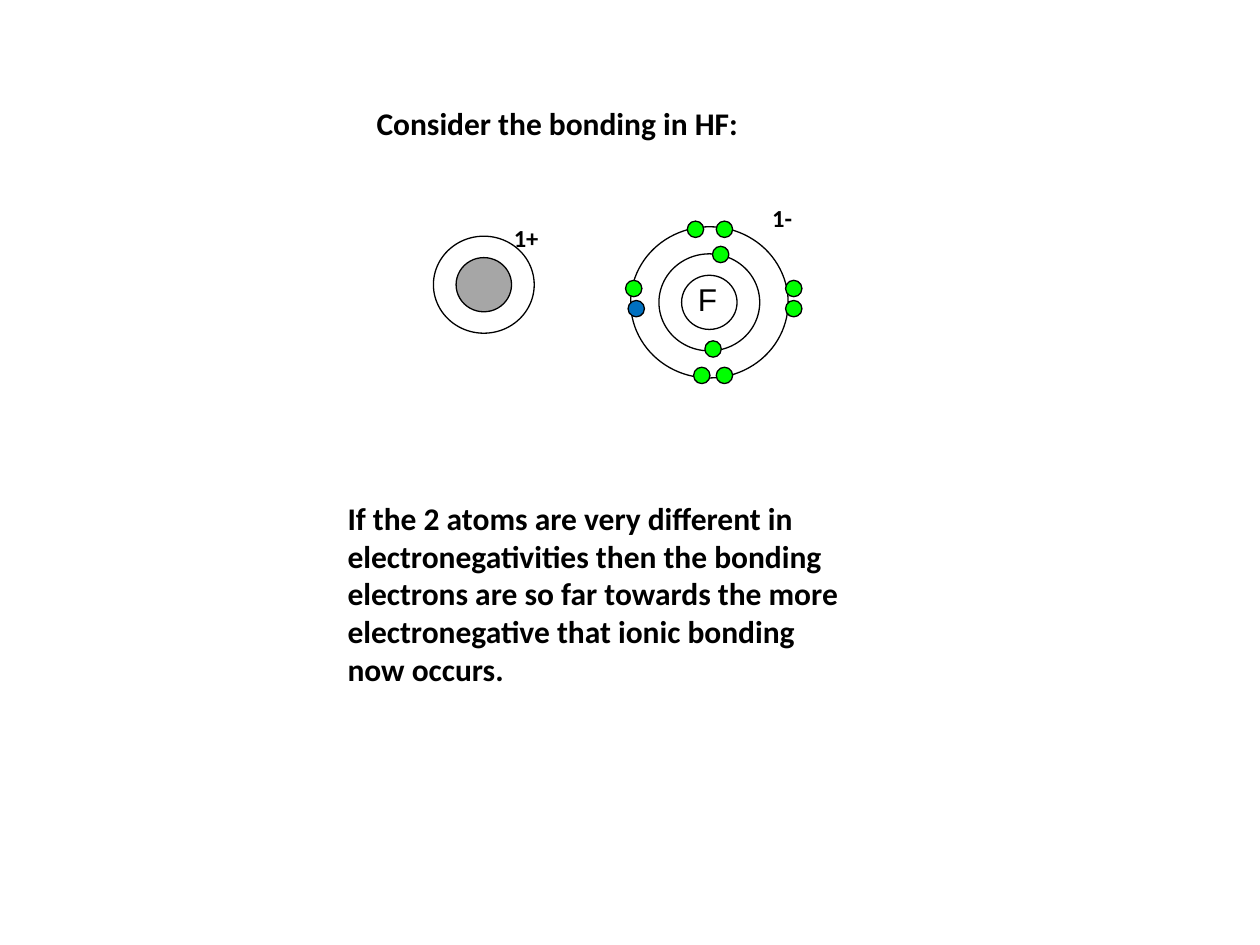
from pptx import Presentation
from pptx.dml.color import RGBColor
from pptx.enum.shapes import MSO_SHAPE
from pptx.enum.text import MSO_AUTO_SIZE
from pptx.util import Inches, Pt

OVAL = MSO_SHAPE.OVAL
GROW, FIXED = MSO_AUTO_SIZE.SHAPE_TO_FIT_TEXT, MSO_AUTO_SIZE.NONE
BLACK, GREY, GREEN, BLUE = "000000", "A6A6A6", "00FF00", "0070C0"

# Content: text and box (left, top, width, height)
TITLE = ("Consider the bonding in HF:", (2.89, 0.78, 3.83, 0.4))
NOTE = ("If the 2 atoms are very different in electronegativities then the "
        "bonding electrons are so far towards the more electronegative that "
        "ionic bonding now occurs.", (2.66, 3.91, 4.22, 1.62))
PLUS = ("1+", (3.98, 1.72, 0.7, 0.34))
MINUS = ("1-", (6.03, 1.56, 0.7, 0.34))
SYMBOL = ("F", (5.46, 2.18, 0.4, 0.19))

# Atoms: centres and ring sizes
H_MID, F_MID = (3.84, 2.26), (5.63, 2.4)
CORE, INNER, OUTER = (0.44, 0.43), (0.8, 0.77), (1.25, 1.2)

# Electrons: centres and colours
DOT = (0.13, 0.13)
DOTS = [
    (5.72, 2.02, GREEN), (5.66, 2.77, GREEN),  # inner shell
    (5.52, 1.82, GREEN), (5.75, 1.82, GREEN),  # top pair
    (6.3, 2.29, GREEN), (6.3, 2.45, GREEN),    # right pair
    (5.57, 2.98, GREEN), (5.75, 2.98, GREEN),  # bottom pair
    (5.03, 2.29, GREEN), (5.05, 2.45, BLUE),   # left pair, one from H
]


def paint(hue):
    return RGBColor.from_string(hue)


def write(home, text, box, size=18, font="Calibri", bold=True, fit=GROW,
          pad=(0.1, 0.05)):
    item = home.add_textbox(*map(Inches, box))
    frame = item.text_frame
    frame.word_wrap = True
    frame.auto_size = fit
    frame.margin_left = frame.margin_right = Inches(pad[0])
    frame.margin_top = frame.margin_bottom = Inches(pad[1])
    run = frame.paragraphs[0].add_run()
    run.text = text
    run.font.size, run.font.name, run.font.bold = Pt(size), font, bold
    run.font.color.rgb = paint(BLACK)


def disc(home, mid, size, fill=None):
    left, top = (m - s / 2 for m, s in zip(mid, size))
    item = home.add_shape(OVAL, *map(Inches, (left, top, *size)))
    item.shadow.inherit = False
    item.line.color.rgb = paint(BLACK)
    item.line.width = Pt(0.75)
    if fill:
        item.fill.solid()
        item.fill.fore_color.rgb = paint(fill)
    else:
        item.fill.background()


deck = Presentation()
deck.slide_width, deck.slide_height = Inches(10), Inches(7.5)
page = deck.slides.add_slide(deck.slide_layouts[6]).shapes

write(page, *TITLE)
write(page, *NOTE)

# Hydrogen ion
atom = page.add_group_shape().shapes
disc(atom, H_MID, CORE, GREY)
disc(atom, H_MID, INNER)
write(atom, *PLUS, size=14)

# Fluoride ion
atom = page.add_group_shape().shapes
write(atom, *SYMBOL, font="Arial", bold=False, fit=FIXED, pad=(0.08, 0.04))
for ring in (CORE, INNER, OUTER):
    disc(atom, F_MID, ring)
for x, y, hue in DOTS:
    disc(atom, (x, y), DOT, hue)
write(atom, *MINUS, size=14)

deck.save("out.pptx")
